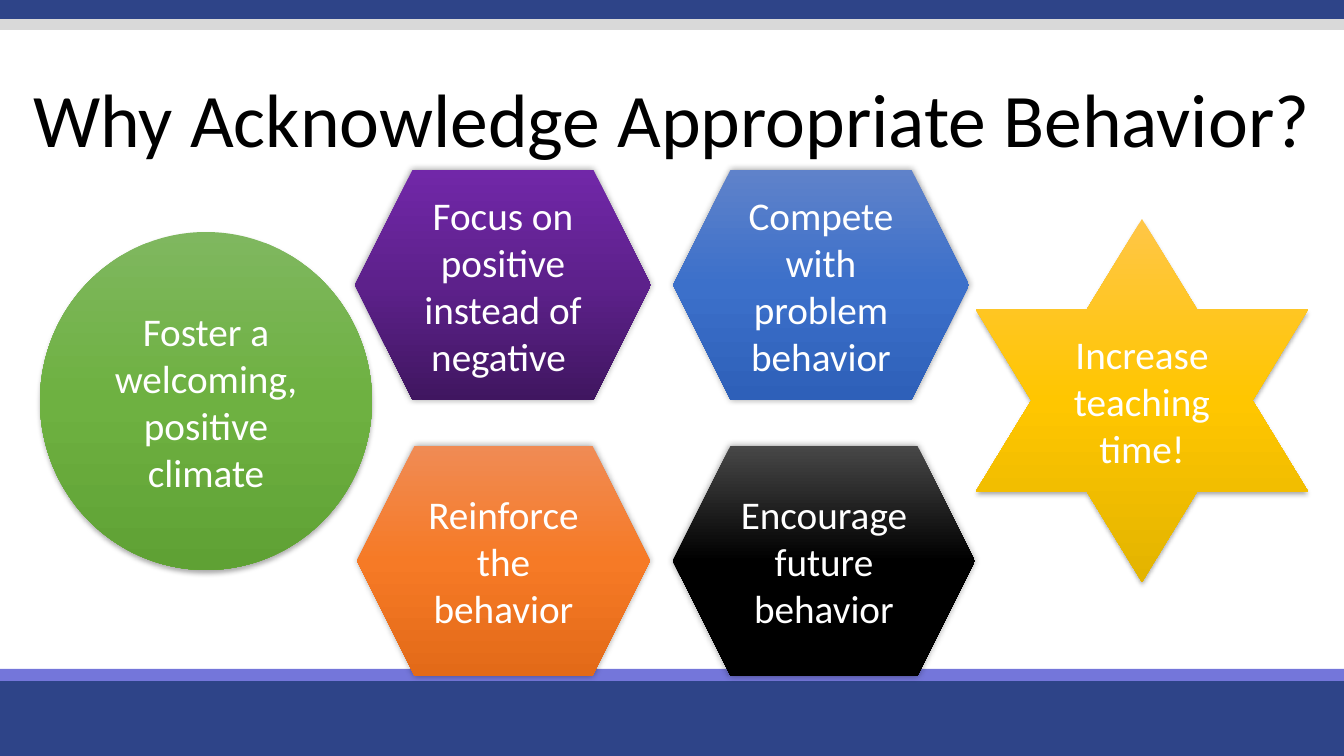
from copy import deepcopy

from lxml import etree
from pptx import Presentation
from pptx.dml.color import RGBColor
from pptx.enum.shapes import MSO_SHAPE
from pptx.enum.text import MSO_ANCHOR, MSO_AUTO_SIZE, PP_ALIGN
from pptx.oxml.ns import qn
from pptx.util import Emu, Pt

RECTANGLE = MSO_SHAPE.RECTANGLE
HEXAGON = MSO_SHAPE.HEXAGON
STAR = MSO_SHAPE.STAR_6_POINT
OVAL = MSO_SHAPE.OVAL
CENTER = PP_ALIGN.CENTER
BOTTOM = MSO_ANCHOR.BOTTOM
MIDDLE = MSO_ANCHOR.MIDDLE
NO_AUTOFIT = MSO_AUTO_SIZE.NONE

EMU_PER_PX = 914400 / 100.8
SLIDE_WIDTH, SLIDE_HEIGHT = 1344, 756

THEME = {
    "font": "Calibri",
    "title_size": 54,
    "label_size": 28,
    "title": "000000",
    "label": "FFFFFF",
    "shadow": "000000",
    "navy": "2E4488",
    "lavender": "7476DA",
    "gray": "D9D9D9",
    "purple": ("7127A8", "5D218B", "401660"),
    "orange": ("F08B54", "F67A26", "E36A18"),
    "blue": ("5F82CA", "3C70CA", "2E60B9"),
    "black": ("474747", "000000", "000000"),
    "gold": ("FFC647", "FFC600", "E3B400"),
    "green": ("7FB75F", "6EB141", "5FA134"),
}

GLOW = {"alpha": 40, "blur": 5, "distance": 0, "angle": 0}
DROP = {"alpha": 32, "blur": 3.5, "distance": 2.2, "angle": 90}


def px(*lengths):
    return [Emu(round(length * EMU_PER_PX)) for length in lengths]


def write_text(shape, text, size, color, anchor):
    frame = shape.text_frame
    frame.word_wrap = True
    frame.auto_size = NO_AUTOFIT
    frame.vertical_anchor = anchor
    paragraph = frame.paragraphs[0]
    paragraph.alignment = CENTER
    run = paragraph.add_run()
    run.text = text
    run.font.name = THEME["font"]
    run.font.size = Pt(THEME[size])
    run.font.color.rgb = RGBColor.from_string(THEME[color])
    return paragraph


presentation = Presentation()
presentation.slide_width, presentation.slide_height = px(SLIDE_WIDTH, SLIDE_HEIGHT)
slide = presentation.slides.add_slide(presentation.slide_layouts[0])
subtitle = slide.placeholders[1].element
subtitle.getparent().remove(subtitle)

bands = [
    (675, 81, "navy"),
    (669, 12, "lavender"),
    (0, 19, "navy"),
    (19, 11, "gray"),
]
for top, height, color in bands:
    band = slide.shapes.add_shape(RECTANGLE, *px(0, top, SLIDE_WIDTH, height))
    band.shadow.inherit = False
    band.fill.solid()
    band.fill.fore_color.rgb = RGBColor.from_string(THEME[color])
    band.line.fill.background()

title = slide.shapes.title
title.left, title.top, title.width, title.height = px(0, 82, SLIDE_WIDTH, 87)
heading = write_text(
    title, "Why Acknowledge Appropriate Behavior?", "title_size", "title", BOTTOM
)
heading.line_spacing = 0.9

reasons = [
    (HEXAGON, (355, 170, 296, 230), "purple", GLOW, "Focus on positive instead of negative "),
    (HEXAGON, (357, 446, 293, 230), "orange", GLOW, "Reinforce the behavior"),
    (HEXAGON, (673, 170, 296, 230), "blue", GLOW, "Compete with problem behavior"),
    (HEXAGON, (673, 446, 302, 230), "black", GLOW, "Encourage future behavior"),
    (STAR, (976, 219, 332, 363), "gold", DROP, "Increase teaching time!"),
    (OVAL, (40, 232, 332, 338), "green", DROP, "Foster a welcoming, positive climate"),
]
for outline, box, gradient, shadow, text in reasons:
    reason = slide.shapes.add_shape(outline, *px(*box))
    reason.line.fill.background()

    reason.fill.gradient()
    reason.fill.gradient_angle = 270
    stop_list = reason.element.spPr.find(".//" + qn("a:gsLst"))
    stop_list.append(deepcopy(stop_list[0]))
    for index, stop in enumerate(reason.fill.gradient_stops):
        stop.position = index / 2
        stop.color.rgb = RGBColor.from_string(THEME[gradient][index])

    reason.shadow.inherit = False
    effects = reason.element.spPr.find(qn("a:effectLst"))
    outer_shadow = etree.SubElement(
        effects,
        qn("a:outerShdw"),
        blurRad=str(Pt(shadow["blur"])),
        dist=str(Pt(shadow["distance"])),
        dir=str(shadow["angle"] * 60000),
        algn="ctr",
        rotWithShape="0",
    )
    shadow_color = etree.SubElement(outer_shadow, qn("a:srgbClr"), val=THEME["shadow"])
    etree.SubElement(shadow_color, qn("a:alpha"), val=str(shadow["alpha"] * 1000))

    write_text(reason, text, "label_size", "label", MIDDLE)

presentation.save("out.pptx")
